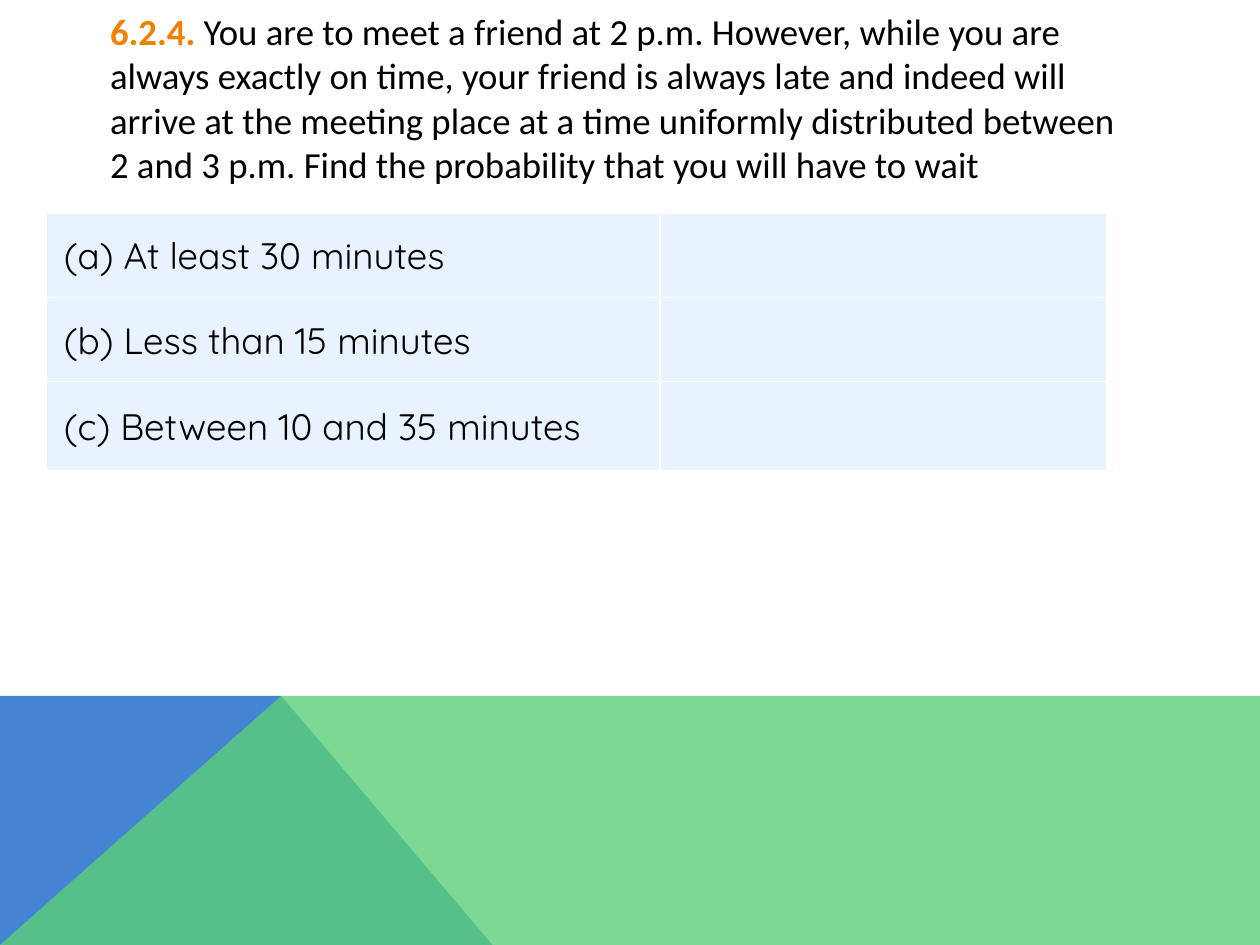
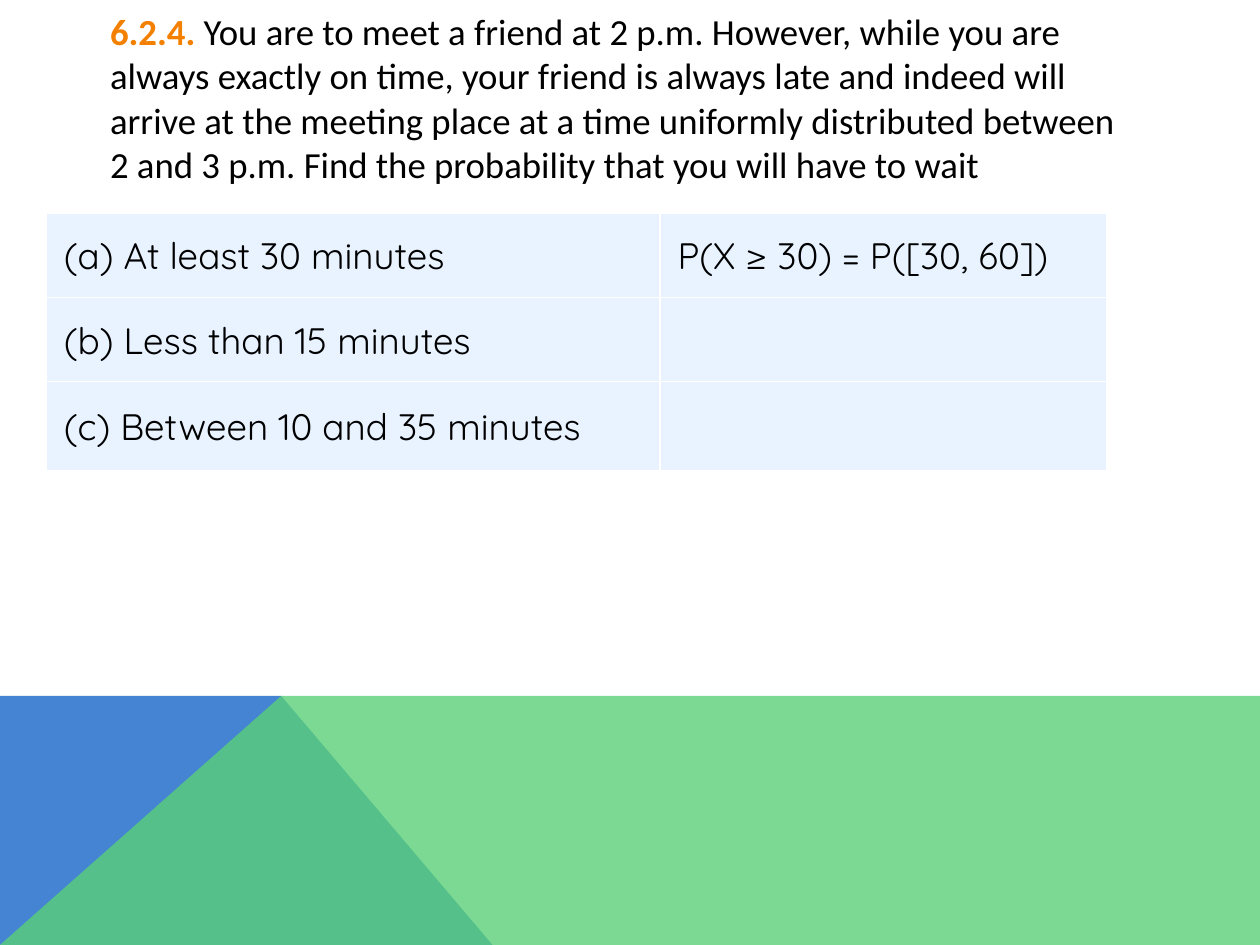
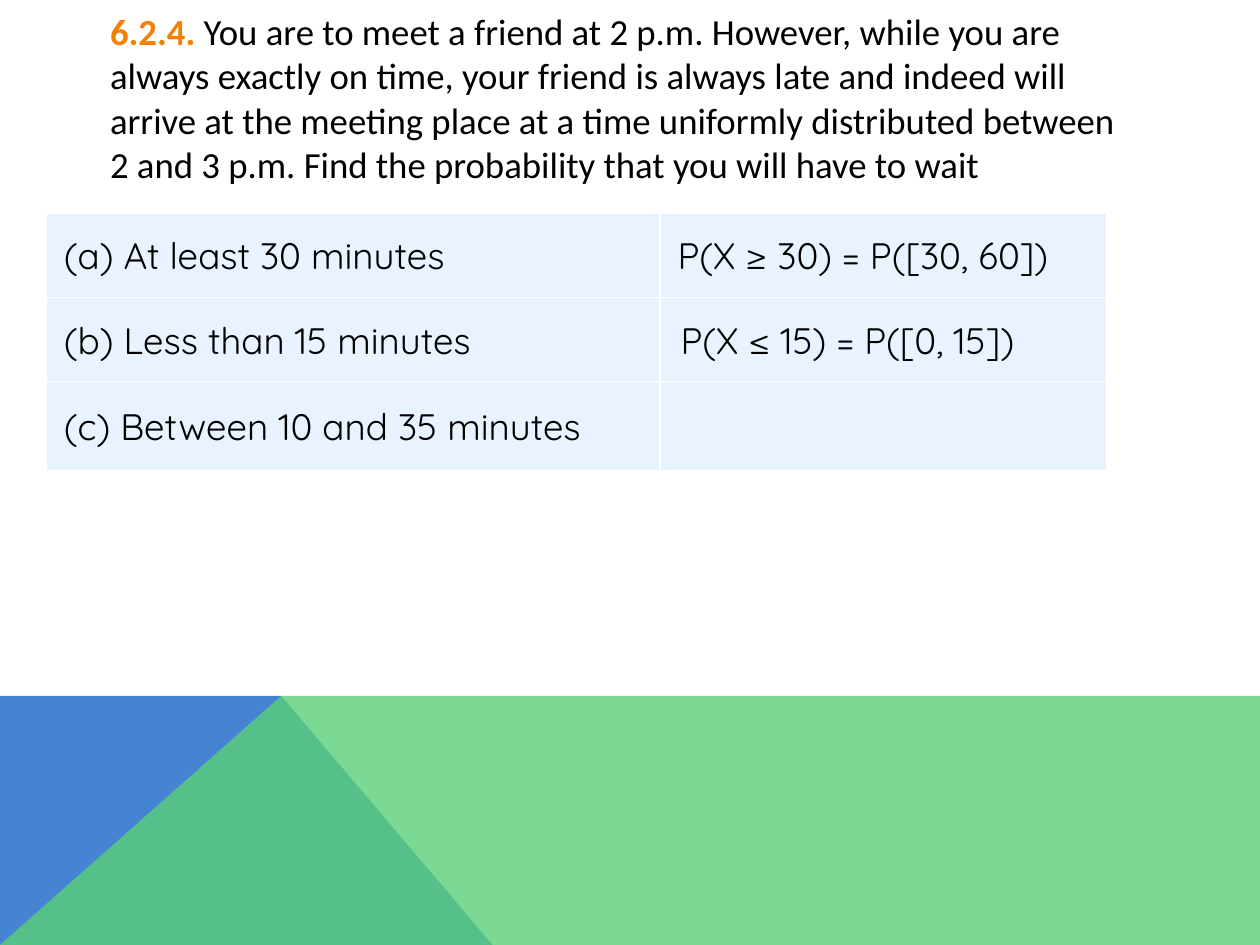
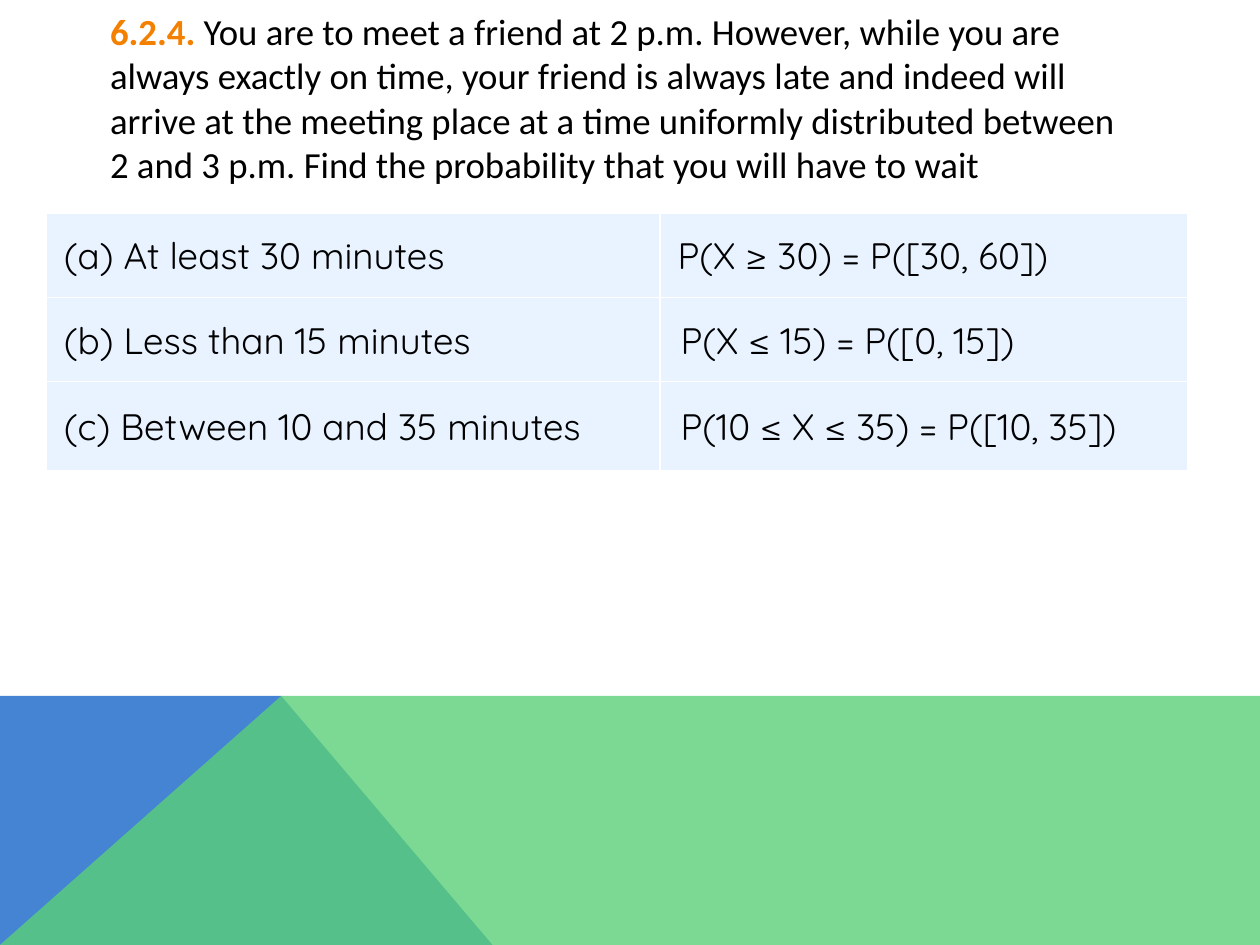
from lxml.etree import SubElement
from pptx import Presentation
from pptx.dml.color import RGBColor
from pptx.enum.text import MSO_ANCHOR as Anchor, MSO_AUTO_SIZE as AutoSize
from pptx.oxml.ns import qn
from pptx.util import Cm, Pt

QUESTION_NUMBER = "6.2.4. "
QUESTION = (
    "You are to meet a friend at 2 p.m. However, while you are always exactly "
    "on time, your friend is always late and indeed will arrive at the meeting "
    "place at a time uniformly distributed between 2 and 3 p.m. Find the "
    "probability that you will have to wait"
)
CASES = [
    "(a) At least 30 minutes",
    "(b) Less than 15 minutes",
    "(c) Between 10 and 35 minutes",
]
ANSWERS = [
    "P(X ≥ 30) = P([30, 60])",
    "P(X ≤ 15) = P([0, 15])",
    "P(10 ≤ X ≤ 35) = P([10, 35])",
]
CASE_INDENT = 0.35
ANSWER_INDENTS = [0.36, 0.42, 0.42]
ROW_HEIGHTS = [1.71, 1.69, 1.79]
CASE_WIDTH = 12.36
ANSWER_WIDTH = 9.02
WIDE_ANSWER_WIDTH = 10.64


def color(hex_string):
    return RGBColor.from_string(hex_string)


class Deck:
    WIDTH, HEIGHT = 25.4, 19.05
    BAND_TOP, BAND_PEAK, BAND_FOOT = 14.03, 5.67, 9.93
    BLUE, GREEN = "4584D3", "5BD078"
    ORANGE, BLACK, WHITE, PALE = "F38000", "000000", "FFFFFF", "E8F3FF"
    TEXT_FONT, TABLE_FONT, SIZE = "Calibri", "Quicksand", 21

    def __init__(self):
        self.presentation = Presentation()
        self.presentation.slide_width = Cm(self.WIDTH)
        self.presentation.slide_height = Cm(self.HEIGHT)
        self.slide = None

    def add_slide(self):
        blank = self.presentation.slide_layouts[6]
        self.slide = self.presentation.slides.add_slide(blank)
        self.add_bands()

    def add_bands(self):
        top, peak = self.BAND_TOP, self.BAND_PEAK
        bottom, right = self.HEIGHT, self.WIDTH
        self.add_outline(
            [(0, bottom), (0, top), (peak, top), (self.BAND_FOOT, bottom)], self.BLUE
        )
        self.add_outline(
            [(0, bottom), (peak, top), (right, top), (right, bottom)], self.GREEN, 80
        )

    def add_outline(self, points, fill, opacity=100):
        """Draw a closed polygon through points in cm; opacity is in percent."""
        start, *others = [(Cm(x), Cm(y)) for x, y in points]
        builder = self.slide.shapes.build_freeform(*start)
        builder.add_line_segments(others, close=True)
        shape = builder.convert_to_shape()
        shape.shadow.inherit = False
        shape.line.fill.background()
        shape.fill.solid()
        shape.fill.fore_color.rgb = color(fill)
        if opacity < 100:
            fill_color = shape.fill._xPr.find(qn("a:solidFill"))[0]
            SubElement(fill_color, qn("a:alpha"), val=str(opacity * 1000))

    def style_run(self, run, font, text_color, bold=False):
        run.font.name = font
        run.font.size = Pt(self.SIZE)
        run.font.bold = bold
        run.font.color.rgb = color(text_color)

    def add_question(self, number, question):
        box = self.slide.shapes.add_textbox(Cm(1.97), Cm(0.06), Cm(23.11), Cm(3.84))
        text_frame = box.text_frame
        text_frame.word_wrap = True
        text_frame.margin_right = Cm(2.38)
        text_frame.auto_size = AutoSize.SHAPE_TO_FIT_TEXT
        paragraph = text_frame.paragraphs[0]
        for text, text_color, bold in (
            (number, self.ORANGE, True),
            (question, self.BLACK, False),
        ):
            run = paragraph.add_run()
            run.text = text
            self.style_run(run, self.TEXT_FONT, text_color, bold)

    def add_table(self, rows, widths, heights):
        """Add a table whose rows hold (text, left indent in cm) pairs."""
        frame = self.slide.shapes.add_table(
            len(rows), len(widths), Cm(0.94), Cm(4.29), Cm(sum(widths)), Cm(sum(heights))
        )
        table = frame.table
        table.first_row = table.horz_banding = False
        for column, width in zip(table.columns, widths):
            column.width = Cm(width)
        for table_row, height, row in zip(table.rows, heights, rows):
            table_row.height = Cm(height)
            for cell, (text, indent) in zip(table_row.cells, row):
                self.fill_cell(cell, text, indent)

    def fill_cell(self, cell, text, indent):
        cell.margin_left = Cm(indent)
        cell.margin_top = cell.margin_right = Cm(0.03)
        cell.margin_bottom = 0
        cell.vertical_anchor = Anchor.MIDDLE
        self.add_borders(cell)
        cell.fill.solid()
        cell.fill.fore_color.rgb = color(self.PALE)
        if text:
            cell.text_frame.text = text
            run = cell.text_frame.paragraphs[0].runs[0]
            self.style_run(run, self.TABLE_FONT, self.BLACK)

    def add_borders(self, cell):
        properties = cell._tc.get_or_add_tcPr()
        for side in "LRTB":
            line = SubElement(properties, qn(f"a:ln{side}"), w=str(Pt(1)))
            fill = SubElement(line, qn("a:solidFill"))
            SubElement(fill, qn("a:srgbClr"), val=self.WHITE)


def main():
    deck = Deck()
    for shown in range(len(ANSWERS) + 1):
        all_shown = shown == len(ANSWERS)
        answers = [
            answer if index < shown else "" for index, answer in enumerate(ANSWERS)
        ]
        rows = [
            [(case, CASE_INDENT), (answer, indent)]
            for case, answer, indent in zip(CASES, answers, ANSWER_INDENTS)
        ]
        widths = [CASE_WIDTH, WIDE_ANSWER_WIDTH if all_shown else ANSWER_WIDTH]
        deck.add_slide()
        deck.add_question(QUESTION_NUMBER, QUESTION)
        deck.add_table(rows, widths, ROW_HEIGHTS)
    deck.presentation.save("out.pptx")


if __name__ == "__main__":
    main()
